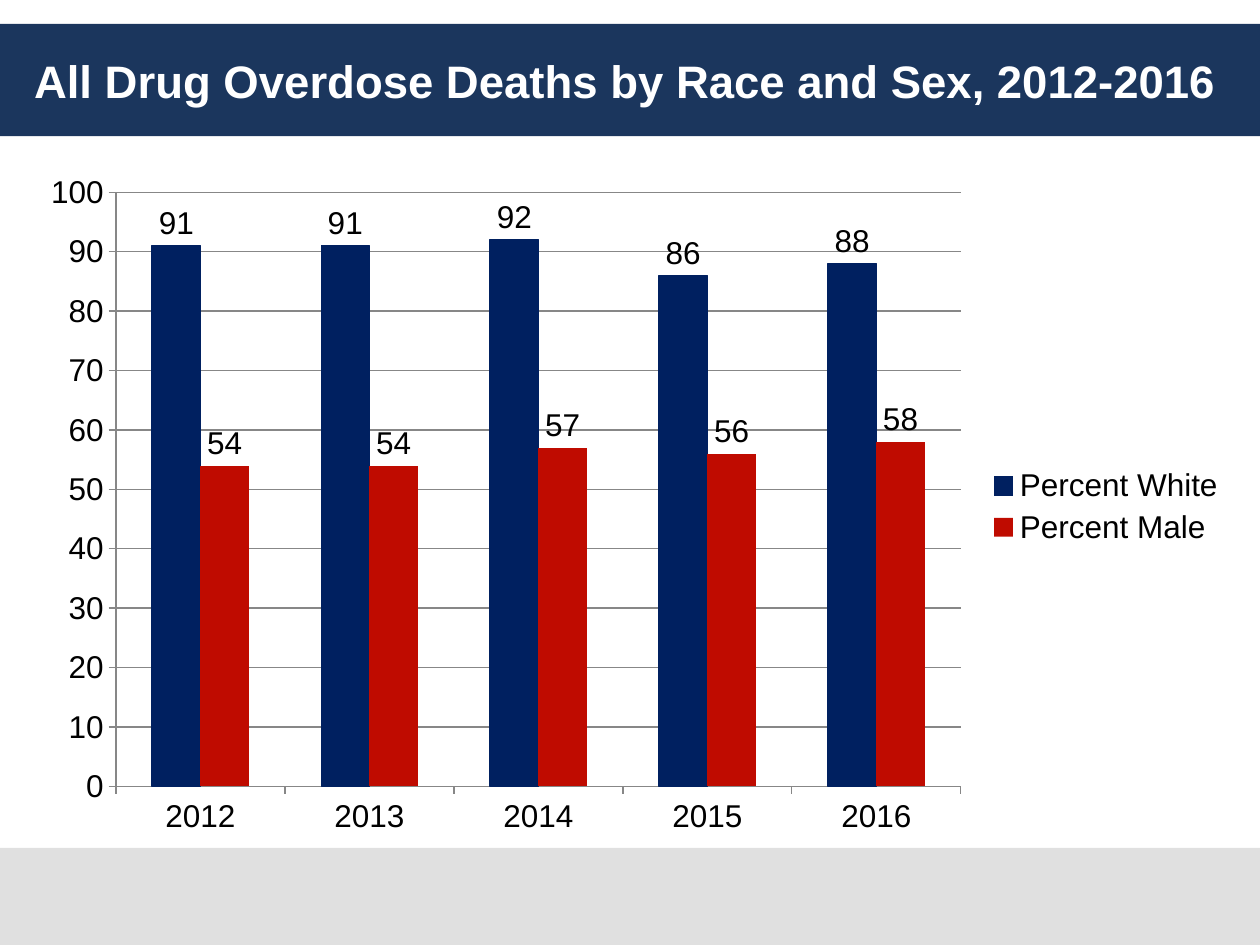
from dataclasses import dataclass

from lxml.etree import SubElement
from pptx import Presentation
from pptx.chart.chart import Chart
from pptx.chart.data import CategoryChartData
from pptx.dml.color import RGBColor
from pptx.enum.chart import XL_CHART_TYPE, XL_LABEL_POSITION, XL_LEGEND_POSITION, XL_TICK_MARK
from pptx.enum.shapes import MSO_SHAPE
from pptx.enum.text import MSO_ANCHOR, PP_ALIGN
from pptx.oxml.ns import qn
from pptx.slide import Slide
from pptx.text.text import TextFrame
from pptx.util import Inches, Pt

NAVY = RGBColor(0x1B, 0x36, 0x5D)
PALE_GREY = RGBColor(0xE0, 0xE0, 0xE0)
WHITE = RGBColor(0xFF, 0xFF, 0xFF)
BLACK = RGBColor(0x00, 0x00, 0x00)
AXIS_GREY = RGBColor(0x87, 0x87, 0x87)
DARK_BLUE = RGBColor(0x00, 0x20, 0x60)
RED = RGBColor(0xBF, 0x0B, 0x00)
FONT = "Arial"


@dataclass(frozen=True)
class Band:
    top: float
    height: float
    color: RGBColor


@dataclass(frozen=True)
class Measure:
    name: str
    percents: tuple[int, ...]
    color: RGBColor
    outlined: bool = False


BANDS = (Band(0.19, 0.89, NAVY), Band(6.73, 0.77, PALE_GREY))
YEARS = ("2012", "2013", "2014", "2015", "2016")
MEASURES = (
    Measure("Percent White", (91, 91, 92, 86, 88), DARK_BLUE, outlined=True),
    Measure("Percent Male", (54, 54, 57, 56, 58), RED),
)
PLOT_AREA = {"x": 0.07, "y": 0.04, "w": 0.7, "h": 0.87}


def style_font(font, *, size: float, color: RGBColor, bold: bool = False) -> None:
    font.name = FONT
    font.size = Pt(size)
    font.bold = bold
    font.color.rgb = color


def write_text(frame: TextFrame, text: str, *, size: float, color: RGBColor,
               bold: bool = False, align: PP_ALIGN = PP_ALIGN.LEFT) -> None:
    frame.word_wrap = True
    frame.vertical_anchor = MSO_ANCHOR.MIDDLE
    paragraph = frame.paragraphs[0]
    paragraph.alignment = align
    run = paragraph.add_run()
    run.text = text
    style_font(run.font, size=size, color=color, bold=bold)


def draw_band(slide: Slide, band: Band, width: int, depth: int) -> None:
    strip = slide.shapes.add_shape(
        MSO_SHAPE.RECTANGLE, 0, Inches(band.top), width, Inches(band.height))
    strip.shadow.inherit = False
    strip.fill.solid()
    strip.fill.fore_color.rgb = band.color
    strip.line.fill.background()
    slide.shapes._spTree.insert(2 + depth, strip._element)


def place_plot_area(chart: Chart) -> None:
    plot_area = chart._chartSpace.chart.plotArea
    layout = plot_area.find(qn("c:layout"))
    if layout is None:
        layout = SubElement(plot_area, qn("c:layout"))
        plot_area.insert(0, layout)
    manual = SubElement(layout, qn("c:manualLayout"))
    settings = {"layoutTarget": "inner", "xMode": "edge", "yMode": "edge", **PLOT_AREA}
    for tag, value in settings.items():
        SubElement(manual, qn(f"c:{tag}")).set("val", str(value))


def format_axes(chart: Chart) -> None:
    for axis in (chart.category_axis, chart.value_axis):
        axis.major_tick_mark = XL_TICK_MARK.OUTSIDE
        axis.minor_tick_mark = XL_TICK_MARK.NONE
        axis.format.line.color.rgb = AXIS_GREY
        axis.format.line.width = Pt(0.75)
    percent_axis = chart.value_axis
    percent_axis.minimum_scale = 0
    percent_axis.maximum_scale = 100
    percent_axis.major_unit = 10
    percent_axis.has_major_gridlines = True
    percent_axis.major_gridlines.format.line.color.rgb = AXIS_GREY
    percent_axis.major_gridlines.format.line.width = Pt(0.75)


def draw_chart(slide: Slide) -> None:
    deaths = CategoryChartData(number_format="0")
    deaths.categories = YEARS
    for measure in MEASURES:
        deaths.add_series(measure.name, measure.percents)
    chart = slide.shapes.add_chart(
        XL_CHART_TYPE.COLUMN_CLUSTERED, Inches(0.25), Inches(1.31),
        Inches(9.58), Inches(5.42), deaths).chart
    style_font(chart.font, size=18, color=BLACK)
    chart.has_title = False
    chart.has_legend = True
    chart.legend.position = XL_LEGEND_POSITION.RIGHT
    chart.legend.include_in_layout = False
    columns = chart.plots[0]
    columns.gap_width = 150
    columns.overlap = 0
    columns.vary_by_categories = False
    for measure, series in zip(MEASURES, columns.series):
        series.format.fill.solid()
        series.format.fill.fore_color.rgb = measure.color
        if measure.outlined:
            series.format.line.color.rgb = measure.color
            series.format.line.width = Pt(0.75)
        labels = series.data_labels
        labels.show_value = True
        labels.position = XL_LABEL_POSITION.OUTSIDE_END
        style_font(labels.font, size=18, color=BLACK)
    format_axes(chart)
    place_plot_area(chart)


def main() -> None:
    deck = Presentation()
    deck.slide_width, deck.slide_height = Inches(10), Inches(7.5)
    slide = deck.slides.add_slide(deck.slide_layouts[5])
    for depth, band in enumerate(BANDS):
        draw_band(slide, band, deck.slide_width, depth)
    title = slide.shapes.title
    title.left, title.top = Inches(0.17), Inches(0.19)
    title.width, title.height = Inches(9.67), Inches(0.9)
    write_text(title.text_frame, "All Drug Overdose Deaths by Race and Sex, 2012-2016",
               size=26, color=WHITE, bold=True)
    draw_chart(slide)
    deck.save("out.pptx")


if __name__ == "__main__":
    main()
